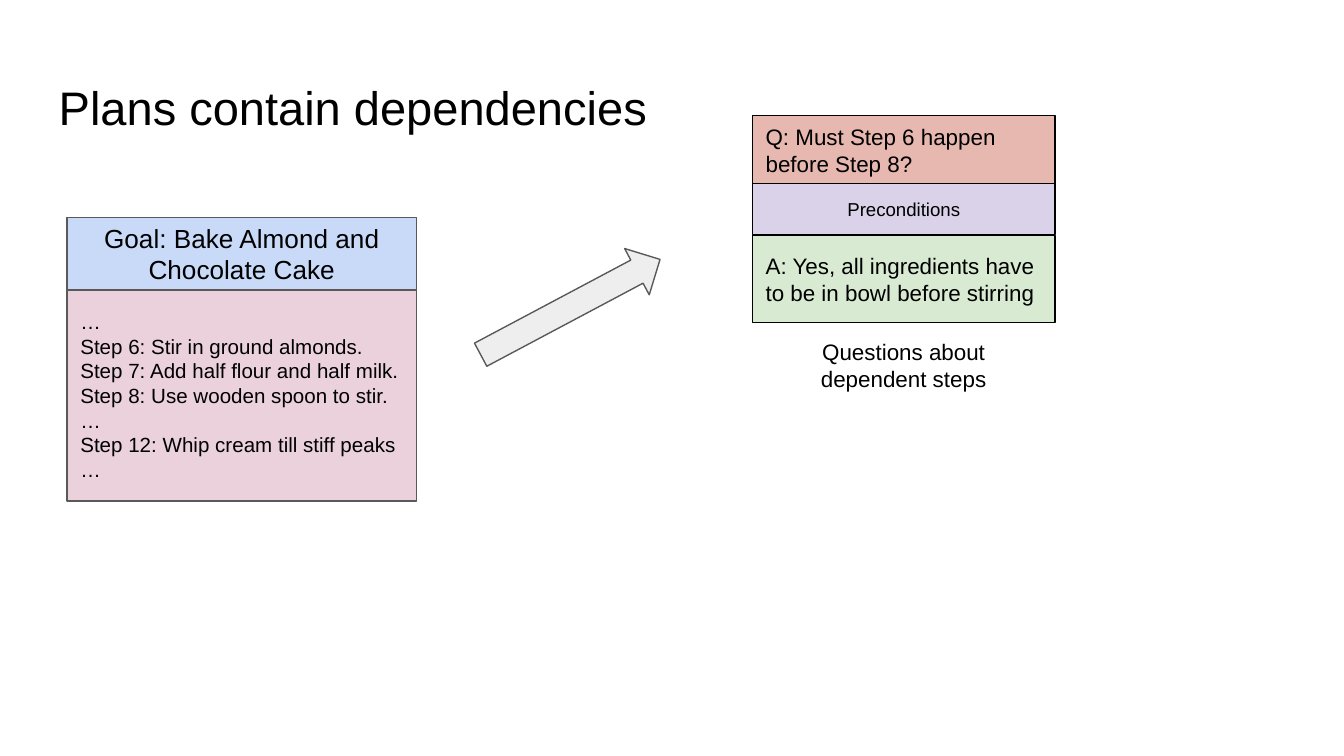
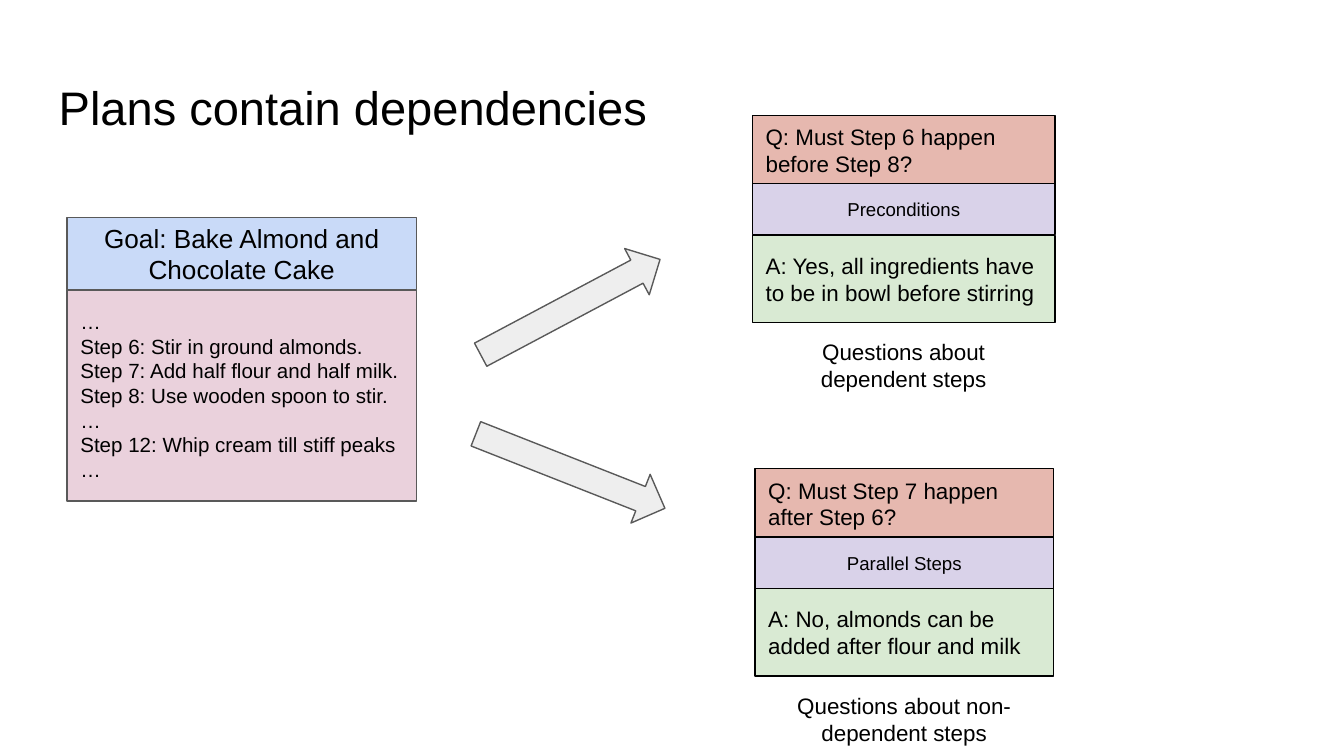
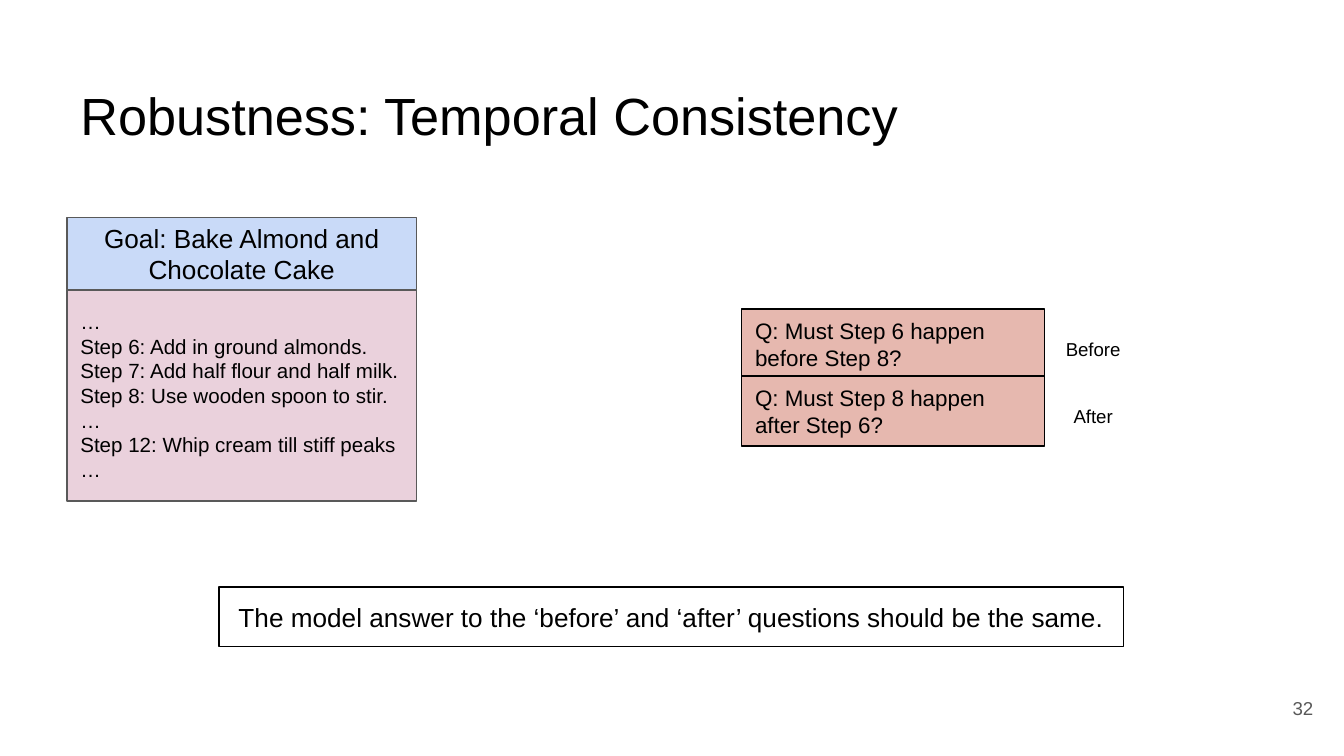
import dataclasses

import pptx
import pptx.dml.color
import pptx.enum.shapes
import pptx.enum.text
import pptx.util

Cm = pptx.util.Cm
SHAPE = pptx.enum.shapes.MSO_SHAPE
ALIGN = pptx.enum.text.PP_ALIGN
ANCHOR = pptx.enum.text.MSO_ANCHOR


@dataclasses.dataclass(frozen=True)
class Theme:
    font: str = "Arial"
    ink: str = "000000"
    grey: str = "595959"
    blue: str = "C9DAF8"
    pink: str = "EAD1DC"
    red: str = "E6B8AF"
    green: str = "D9EAD3"
    violet: str = "D9D2E9"
    pale: str = "EEEEEE"
    line: float = 0.75
    inset: float = 0.25
    title: float = 25.2
    large: float = 28
    head: float = 14
    body: float = 12
    step: float = 11
    small: float = 10


THEME = Theme()
QUERY_H = 1.32

GOAL = "Goal: Bake Almond and Chocolate Cake"
STEPS = [
    "…",
    "Step 6: {} in ground almonds.",
    "Step 7: Add half flour and half milk.",
    "Step 8: Use wooden spoon to stir.",
    "…",
    "Step 12: Whip cream till stiff peaks",
    "…",
]
FIRST_QUERY = "Q: Must Step 6 happen before Step 8?"

# Each branch: arrow top and angle, card box (left, top, width), card texts
BRANCHES = [
    (5.31, 332, (14.22, 2.18, 5.72),
     (FIRST_QUERY, "Preconditions",
      "A: Yes, all ingredients have to be in bowl before stirring",
      "Questions about dependent steps")),
    (8.41, 21.5, (14.27, 8.86, 5.64),
     ("Q: Must Step 7 happen after Step 6?", "Parallel Steps",
      "A: No, almonds can be added after flour and milk",
      "Questions about non-dependent steps")),
]


def rgb(code):
    return pptx.dml.color.RGBColor.from_string(code)


def write(shape, lines, size, align=ALIGN.LEFT, anchor=ANCHOR.TOP,
          color=THEME.ink, pad=THEME.inset):
    """Fill a shape with one paragraph per line."""
    frame = shape.text_frame
    frame.word_wrap = True
    frame.vertical_anchor = anchor
    frame.margin_left = frame.margin_right = Cm(THEME.inset)
    frame.margin_top = frame.margin_bottom = Cm(pad)
    frame.text = "\n".join(lines)
    for para in frame.paragraphs:
        para.alignment = align
        para.font.name = THEME.font
        para.font.size = pptx.util.Pt(size)
        para.font.color.rgb = rgb(color)


def label(shapes, box, text, size, **style):
    write(shapes.add_textbox(*map(Cm, box)), [text], size, **style)


def form(shapes, kind, box, fill, line):
    shape = shapes.add_shape(kind, *map(Cm, box))
    shape.shadow.inherit = False
    if fill:
        shape.fill.solid()
        shape.fill.fore_color.rgb = rgb(fill)
    else:
        shape.fill.background()
    shape.line.color.rgb = rgb(line)
    shape.line.width = pptx.util.Pt(THEME.line)
    return shape


def block(shapes, box, lines, size, fill=None, line=THEME.ink, align=ALIGN.LEFT):
    shape = form(shapes, SHAPE.RECTANGLE, box, fill, line)
    write(shape, lines, size, align, ANCHOR.MIDDLE)


def plan(slide, verb, left=1.27, top=4.11, width=6.6):
    """Goal above its list of steps."""
    shapes = slide.shapes.add_group_shape().shapes
    goal_h, steps_h = 1.37, 3.99
    block(shapes, (left, top, width, goal_h), [GOAL], THEME.head,
          THEME.blue, THEME.grey, ALIGN.CENTER)
    block(shapes, (left, top + goal_h, width, steps_h),
          [step.format(verb) for step in STEPS], THEME.step,
          THEME.pink, THEME.grey)


def query(shapes, left, top, width, text):
    block(shapes, (left, top, width, QUERY_H), [text], THEME.body, THEME.red)


def card(slide, box, texts):
    """Question, type, answer and caption in one stack."""
    left, top, width = box
    ask, kind, reply, note = texts
    shapes = slide.shapes.add_group_shape().shapes
    query(shapes, left, top, width, ask)
    note_w = 5.46
    label(shapes, (left + (width - note_w) / 2, top + 3.97, note_w, QUERY_H),
          note, THEME.body, align=ALIGN.CENTER)
    block(shapes, (left, top + 2.27, width, 1.65), [reply],
          THEME.body, THEME.green)
    block(shapes, (left, top + 1.29, width, 0.97), [kind],
          THEME.small, THEME.violet, align=ALIGN.CENTER)


def arrow(slide, top, angle):
    shape = form(slide.shapes, SHAPE.RIGHT_ARROW, (8.86, top, 3.84, 0.99),
                 THEME.pale, THEME.grey)
    shape.rotation = angle


def pair(slide, left=14.02, top=5.84, width=5.72):
    """Two mirrored questions, each with a label on its right."""
    shapes = slide.shapes.add_group_shape().shapes
    rows = [(FIRST_QUERY, "Before"),
            ("Q: Must Step 8 happen after Step 6?", "After")]
    for row, (text, name) in enumerate(rows):
        y = top + row * 1.27
        query(shapes, left, y, width, text)
        label(slide.shapes, (left + width + 0.12, y + 0.33, 1.6, 0.81),
              name, THEME.small, align=ALIGN.CENTER)


def plan_slide(slide, count):
    """Plan on the left, with an arrow and a card for each branch."""
    label(slide.shapes, (0.86, 1.24, 12.5, 1.6),
          "Plans contain dependencies", THEME.title)
    plan(slide, "Stir")
    for top, angle, box, texts in BRANCHES[:count]:
        card(slide, box, texts)
        arrow(slide, top, angle)


def check_slide(slide):
    """Plan, mirrored questions and the rule they must obey."""
    label(slide.shapes, (1.27, 0.97, 22.86, 2.39),
          "Robustness: Temporal Consistency", THEME.large,
          anchor=ANCHOR.MIDDLE, pad=0.13)
    plan(slide, "Add")
    pair(slide)
    block(slide.shapes, (4.14, 11.1, 17.1, 1.12),
          ["The model answer to the ‘before’ and ‘after’ questions "
           "should be the same."], THEME.head, align=ALIGN.CENTER)
    # Page number
    label(slide.shapes, (23.55, 12.95, 1.52, 1.09), "32", THEME.small,
          align=ALIGN.RIGHT, color=THEME.grey)


def main():
    deck = pptx.Presentation()
    deck.slide_width, deck.slide_height = Cm(25.4), Cm(14.29)
    blank = deck.slide_layouts[6]
    for count in (1, 2):
        plan_slide(deck.slides.add_slide(blank), count)
    check_slide(deck.slides.add_slide(blank))
    deck.save("out.pptx")


if __name__ == "__main__":
    main()
